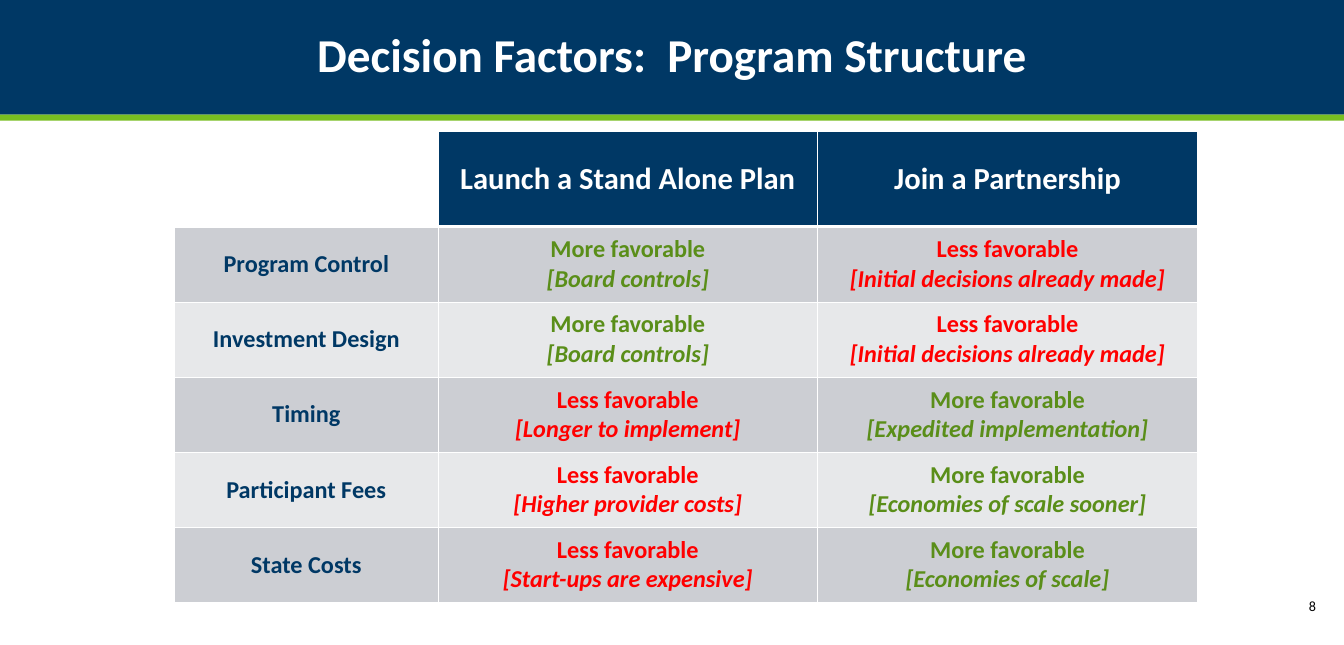
from dataclasses import dataclass
from lxml import etree
from pptx import Presentation
from pptx.dml.color import RGBColor
from pptx.enum import shapes, text
from pptx.oxml import ns
from pptx.util import Inches, Pt


@dataclass(frozen=True)
class Theme:
    font: str = "Calibri"
    navy: str = "003865"
    lime: str = "78BE21"
    good: str = "5A8E19"
    bad: str = "FF0000"
    white: str = "FFFFFF"
    black: str = "000000"
    bands: tuple = ("CCCED3", "E7E8EA")
    title: float = 44.7
    head: float = 29
    body: float = 23
    page: float = 13.4


theme = Theme()


def write(frame, lines, size, color, align=text.PP_ALIGN.CENTER, bold=True):
    frame.word_wrap = True
    for n, line in enumerate(lines):
        para = frame.paragraphs[0] if n == 0 else frame.add_paragraph()
        para.alignment = align
        run = para.add_run()
        run.text = line
        font = run.font
        font.name = theme.font
        font.size = Pt(size)
        font.bold = bold
        font.italic = n > 0
        font.color.rgb = RGBColor.from_string(color)


def edge(cell, sides):
    props = cell._tc.get_or_add_tcPr()
    for n, (side, width) in enumerate(sides.items()):
        line = etree.Element(ns.qn(f"a:ln{side}"), w=str(Pt(width)))
        fill = etree.SubElement(line, ns.qn("a:solidFill"))
        etree.SubElement(fill, ns.qn("a:srgbClr"), val=theme.white)
        props.insert(n, line)


deck = Presentation()
deck.slide_width = Inches(17.7)
deck.slide_height = Inches(8.5)
slide = deck.slides.add_slide(deck.slide_layouts[6])

for top, height, color in [(0, 1.51, theme.navy), (1.51, 0.08, theme.lime)]:
    band = slide.shapes.add_shape(
        shapes.MSO_SHAPE.RECTANGLE, 0, Inches(top), deck.slide_width, Inches(height))
    band.shadow.inherit = False
    band.fill.solid()
    band.fill.fore_color.rgb = RGBColor.from_string(color)
    band.line.fill.background()

title = slide.shapes.add_textbox(Inches(1.22), 0, Inches(15.27), Inches(1.51)).text_frame
title.margin_left = title.margin_right = 0
title.margin_top = title.margin_bottom = Inches(0.2)
title.vertical_anchor = text.MSO_ANCHOR.MIDDLE
write(title, ["Decision Factors:  Program Structure"], theme.title, theme.white)
title.paragraphs[0].line_spacing = 0.9

page = slide.shapes.add_textbox(
    Inches(15.31), Inches(7.76), Inches(2.12), Inches(0.45)).text_frame
page.vertical_anchor = text.MSO_ANCHOR.MIDDLE
write(page, ["8"], theme.page, theme.black, text.PP_ALIGN.RIGHT, False)

more, less = "More favorable", "Less favorable"
tone = {more: theme.good, less: theme.bad}
rows = [
    ([], ["Launch a Stand Alone Plan"], ["Join a Partnership"]),
    (["Program Control"], [more, "[Board controls]"],
     [less, "[Initial decisions already made]"]),
    (["Investment Design"], [more, "[Board controls]"],
     [less, "[Initial decisions already made]"]),
    (["Timing"], [less, "[Longer to implement]"],
     [more, "[Expedited implementation]"]),
    (["Participant Fees"], [less, "[Higher provider costs]"],
     [more, "[Economies of scale sooner]"]),
    (["State Costs"], [less, "[Start-ups are expensive]"],
     [more, "[Economies of scale]"]),
]
widths = [3.47, 5, 5]
heights = [1.26] + [0.99] * 5

grid = slide.shapes.add_table(
    len(rows), len(widths), Inches(2.3), Inches(1.73),
    Inches(sum(widths)), Inches(sum(heights))).table
grid.first_row = False
grid.horz_banding = False
for col, width in zip(grid.columns, widths):
    col.width = Inches(width)

for r, (row, height) in enumerate(zip(rows, heights)):
    grid.rows[r].height = Inches(height)
    for c, lines in enumerate(row):
        cell = grid.cell(r, c)
        cell.vertical_anchor = text.MSO_ANCHOR.MIDDLE
        cell.margin_left = cell.margin_right = Inches(0.11)
        cell.margin_top = cell.margin_bottom = Inches(0.06)
        if lines:
            back = theme.bands[(r - 1) % 2] if r else theme.navy
            cell.fill.solid()
            cell.fill.fore_color.rgb = RGBColor.from_string(back)
            size = theme.body if r else theme.head
            color = tone.get(lines[0], theme.navy) if r else theme.white
            write(cell.text_frame, lines, size, color)
        else:
            cell.fill.background()
        edge(cell, {"L": 1, "R": 1, "T": 3 if r == 1 else 1, "B": 1 if r else 3})

deck.save("out.pptx")
